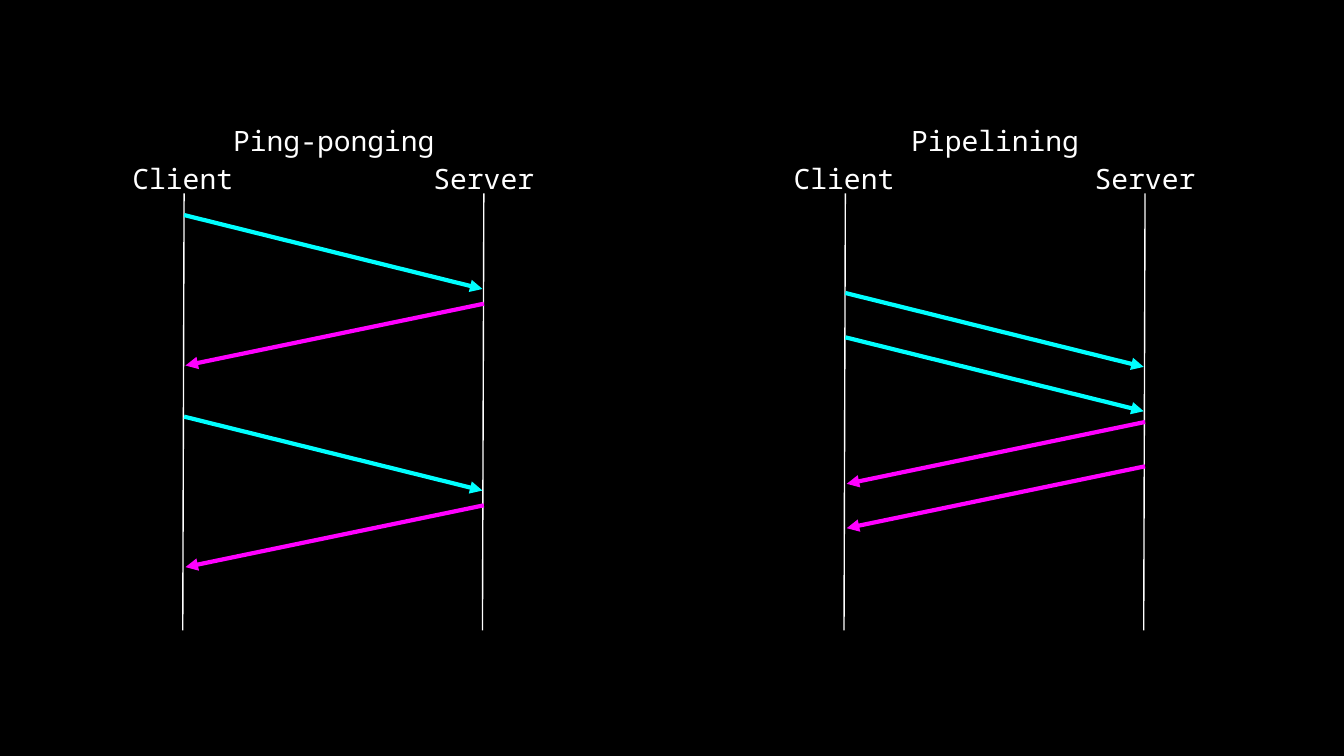
import pptx
import pptx.dml.color
import pptx.enum.shapes
import pptx.enum.text
import pptx.oxml
import pptx.oxml.ns
import pptx.util
from pptx.util import Inches

BLACK = pptx.dml.color.RGBColor(0x00, 0x00, 0x00)
WHITE = pptx.dml.color.RGBColor(0xFF, 0xFF, 0xFF)
CYAN = pptx.dml.color.RGBColor(0x00, 0xFF, 0xFF)
MAGENTA = pptx.dml.color.RGBColor(0xFF, 0x00, 0xFF)

FONT_FORMAT = {"name": "Noto Sans Mono", "size": pptx.util.Pt(15)}
MARGINS = ("margin_left", "margin_top", "margin_right", "margin_bottom")

# Shared geometry of both diagrams, in inches
HEADING_TOP, HEADING_HEIGHT = 0.82, 0.28
LABEL_TOP, LABEL_HEIGHT = 1.1, 0.34
SERVER_WIDTH = 1.07
LIFELINE_TOP, LIFELINE_BOTTOM = 1.44, 4.69
LIFELINE_SLANT = 0.01
SERVER_OFFSET = 2.23
ARROW_GAP = 0.01
REQUEST_DROP, REPLY_DROP = 0.55, 0.46

# Heading and its width, client position and label width,
# start heights of requests and of replies
DIAGRAMS = [
    ("Ping-ponging", 1.83, 1.37, 1.01, (1.6, 3.1), (2.26, 3.76)),
    ("Pipelining", 1.57, 6.29, 1.11, (2.18, 2.51), (3.14, 3.47)),
]


def add_label(slide, text, center, top, width, height):
    """Add a centred white text box around a horizontal position."""
    shape = slide.shapes.add_textbox(
        Inches(center - width / 2), Inches(top), Inches(width), Inches(height)
    )
    frame = shape.text_frame
    frame.word_wrap = True
    frame.vertical_anchor = pptx.enum.text.MSO_ANCHOR.TOP
    for margin in MARGINS:
        setattr(frame, margin, Inches(0.1))
    paragraph = frame.paragraphs[0]
    paragraph.alignment = pptx.enum.text.PP_ALIGN.CENTER
    run = paragraph.add_run()
    run.text = text
    for attribute, value in FONT_FORMAT.items():
        setattr(run.font, attribute, value)
    run.font.color.rgb = WHITE


def add_line(slide, start, end, color, width):
    """Add a straight line without a shadow."""
    connector = slide.shapes.add_connector(
        pptx.enum.shapes.MSO_CONNECTOR.STRAIGHT,
        *(Inches(value) for value in start + end),
    )
    connector.line.color.rgb = color
    connector.line.width = pptx.util.Pt(width)
    properties = connector._element.spPr
    properties.append(pptx.oxml.parse_xml(
        f'<a:effectLst {pptx.oxml.ns.nsdecls("a")}/>'
    ))
    return connector


def add_message(slide, start, end, color):
    """Add a message arrow with a triangle at its end."""
    connector = add_line(slide, start, end, color, 2.25)
    connector.line._get_or_add_ln().append(pptx.oxml.parse_xml(
        f'<a:tailEnd {pptx.oxml.ns.nsdecls("a")} type="triangle"/>'
    ))


def add_diagram(slide, heading, heading_width, client, client_width,
                requests, replies):
    """Add one client and server sequence diagram."""
    server = client + SERVER_OFFSET

    # Lifelines
    for position in (client, server):
        add_line(slide, (position, LIFELINE_TOP),
                 (position - LIFELINE_SLANT, LIFELINE_BOTTOM), WHITE, 0.75)

    # Messages
    for top in requests:
        add_message(slide, (client, top),
                    (server - ARROW_GAP, top + REQUEST_DROP), CYAN)
    for top in replies:
        add_message(slide, (server, top),
                    (client + ARROW_GAP, top + REPLY_DROP), MAGENTA)

    # Labels
    add_label(slide, "Client", client - 0.01, LABEL_TOP,
              client_width, LABEL_HEIGHT)
    add_label(slide, "Server", server, LABEL_TOP, SERVER_WIDTH, LABEL_HEIGHT)
    add_label(slide, heading, (client + server) / 2, HEADING_TOP,
              heading_width, HEADING_HEIGHT)


def main():
    presentation = pptx.Presentation()
    # Widescreen format, 16 to 9
    presentation.slide_width = Inches(10)
    presentation.slide_height = Inches(10 * 9 / 16)
    slide = presentation.slides.add_slide(presentation.slide_layouts[6])
    slide.background.fill.solid()
    slide.background.fill.fore_color.rgb = BLACK
    for diagram in DIAGRAMS:
        add_diagram(slide, *diagram)
    presentation.save("out.pptx")


if __name__ == "__main__":
    main()
